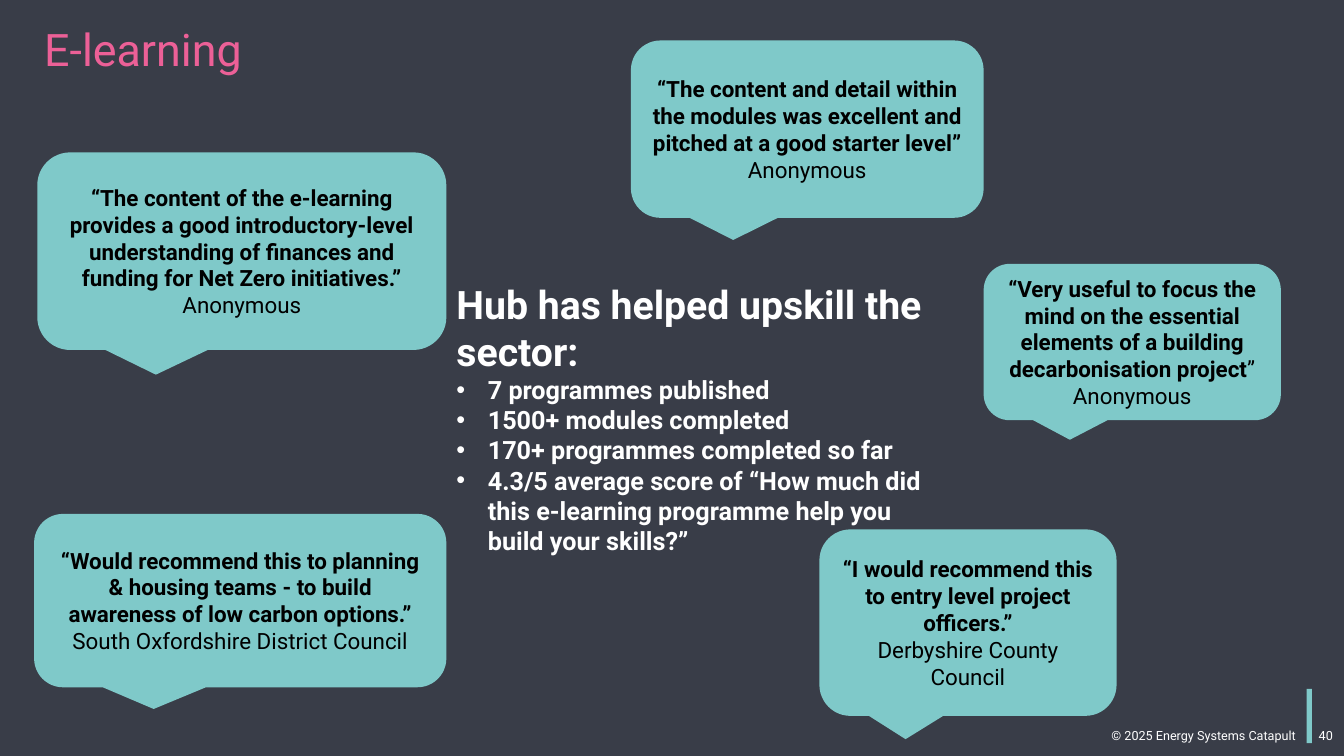
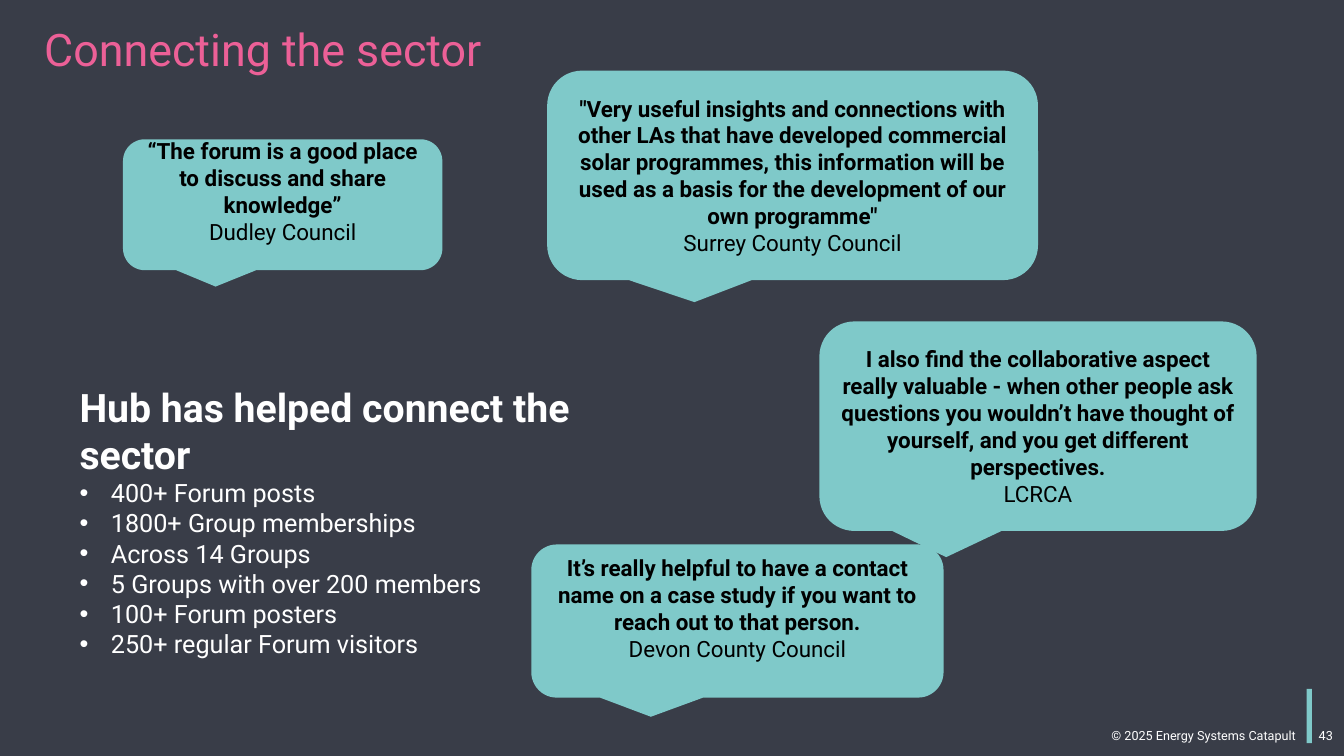
"""Build two dark slides of learner and forum feedback in speech bubbles."""
from dataclasses import dataclass

from lxml import etree
from pptx import Presentation
from pptx.dml.color import RGBColor
from pptx.enum.shapes import MSO_SHAPE
from pptx.enum.text import MSO_ANCHOR, MSO_AUTO_SIZE, PP_ALIGN
from pptx.oxml.ns import qn
from pptx.util import Cm, Pt

BUBBLE = MSO_SHAPE.ROUNDED_RECTANGULAR_CALLOUT
RECTANGLE = MSO_SHAPE.RECTANGLE
TOP, MIDDLE = MSO_ANCHOR.TOP, MSO_ANCHOR.MIDDLE
LEFT, CENTER, RIGHT = PP_ALIGN.LEFT, PP_ALIGN.CENTER, PP_ALIGN.RIGHT
NO_AUTOFIT = MSO_AUTO_SIZE.NONE


@dataclass(frozen=True)
class Theme:
    """Colours, font and type sizes that the slides share."""
    background: RGBColor = RGBColor(0x39, 0x3D, 0x48)
    teal: RGBColor = RGBColor(0x7F, 0xC9, 0xC9)
    pink: RGBColor = RGBColor(0xEC, 0x60, 0x97)
    white: RGBColor = RGBColor(0xFF, 0xFF, 0xFF)
    black: RGBColor = RGBColor(0, 0, 0)
    font: str = "Roboto"
    title_size: int = 32
    heading_size: int = 28
    list_size: int = 18
    quote_size: int = 16
    footer_size: int = 9


@dataclass(frozen=True)
class Quote:
    """A speech bubble: its box in centimetres, its words and its speaker."""
    box: tuple
    words: str
    speaker: str
    closing: str = ""
    space_below: float = 0
    tail: tuple = (-0.21, 0.625)


THEME = Theme()
COPYRIGHT = "© 2025 Energy Systems Catapult"
LIST_WIDTH, LIST_HEIGHT = 12.95, 8.81
LIST_INDENT = Cm(0.79)
INSET = 0.13

LEARNING_FACTS = [
    "7 programmes published",
    "1500+ modules completed",
    "170+ programmes completed so far",
    "4.3/5 average score of “How much did this e-learning programme help you build your skills?”",
]
LEARNING_QUOTES = [
    Quote((0.94, 3.84, 10.31, 4.98),
          "“The content of the e-learning provides a good introductory-level understanding "
          "of finances and funding for Net Zero initiatives.”", "Anonymous"),
    Quote((24.79, 6.65, 7.49, 3.94),
          "“Very useful to focus the mind on the essential elements of a building "
          "decarbonisation project", "Anonymous", closing="”"),
    Quote((15.9, 1.02, 8.89, 4.47),
          "“The content and detail within the modules was excellent and pitched at a good "
          "starter level”", "Anonymous"),
    Quote((20.65, 13.34, 7.49, 4.7),
          "“I would recommend this to entry level project officers.”",
          "Derbyshire County Council"),
    Quote((0.86, 12.95, 10.39, 4.37),
          "“Would recommend this to planning & housing teams - to build awareness of low "
          "carbon options.”", "South Oxfordshire District Council"),
]
FORUM_FACTS = [
    "400+ Forum posts",
    "1800+ Group memberships",
    "Across 14 Groups",
    "5 Groups with over 200 members",
    "100+ Forum posters",
    "250+ regular Forum visitors",
]
FORUM_QUOTES = [
    Quote((13.39, 13.72, 10.39, 3.86),
          "It’s really helpful to have a contact name on a case study if you want to reach "
          "out to that person.", "Devon County Council", space_below=0.64),
    Quote((3.1, 3.51, 8.05, 3.3),
          "“The forum is a good place to discuss and share knowledge”",
          "Dudley Council", space_below=0.68),
    Quote((20.65, 8.1, 11.02, 5.28),
          "I also find the collaborative aspect really valuable - when other people ask "
          "questions you wouldn’t have thought of yourself, and you get different "
          "perspectives.", "LCRCA"),
    Quote((13.79, 1.78, 12.37, 5.28),
          "\"Very useful insights and connections with other LAs that have developed "
          "commercial solar programmes, this information will be used as a basis for the "
          "development of our own programme\"", "Surrey County Council", tail=(-0.2, 0.605)),
]


def place(shape, box):
    """Move and size a shape by a box in centimetres."""
    shape.left, shape.top, shape.width, shape.height = map(Cm, box)


def add_run(paragraph, text, size, color, bold=False):
    """Add one formatted run to a paragraph."""
    run = paragraph.add_run()
    run.text = text
    run.font.name = THEME.font
    run.font.size = Pt(size)
    run.font.bold = bold
    run.font.color.rgb = color


def set_bullet(paragraph, character=None):
    """Give a paragraph a hanging bullet, or remove the inherited one."""
    properties = paragraph._p.get_or_add_pPr()
    indent = LIST_INDENT if character else 0
    properties.set("marL", str(indent))
    properties.set("indent", str(-indent))
    if character:
        etree.SubElement(properties, qn("a:buChar")).set("char", character)
    else:
        etree.SubElement(properties, qn("a:buNone"))


def add_solid(slide, preset, box):
    """Add a teal preset shape without line or shadow."""
    shape = slide.shapes.add_shape(preset, *map(Cm, box))
    shape.fill.solid()
    shape.fill.fore_color.rgb = THEME.teal
    shape.line.fill.background()
    shape.shadow.inherit = False
    return shape


def add_footer_text(slide, box, text, alignment, anchor, wrap):
    """Add a small white line at the foot of the slide."""
    frame = slide.shapes.add_textbox(*map(Cm, box)).text_frame
    frame.word_wrap = wrap
    frame.vertical_anchor = anchor
    paragraph = frame.paragraphs[0]
    paragraph.alignment = alignment
    add_run(paragraph, text, THEME.footer_size, THEME.white)


def add_footer(slide, number):
    """Add the copyright line, the teal bar and the slide number."""
    add_footer_text(slide, (27.76, 18.21, 5.16, 0.64), COPYRIGHT, LEFT, TOP, False)
    add_solid(slide, RECTANGLE, (32.93, 17.36, 0.13, 1.37))
    add_footer_text(slide, (31.55, 18.03, 2.29, 1.02), str(number), RIGHT, MIDDLE, True)


def prepare_placeholder(placeholder, box):
    """Place a placeholder and return its text frame, anchored at the top."""
    place(placeholder, box)
    frame = placeholder.text_frame
    frame.auto_size = NO_AUTOFIT
    frame.vertical_anchor = TOP
    return frame


def fill_title(slide, text):
    """Write the pink slide title."""
    frame = prepare_placeholder(slide.shapes.title, (0.86, 0.58, 24.84, 1.5))
    paragraph = frame.paragraphs[0]
    paragraph.alignment = LEFT
    paragraph.line_spacing = 0.9
    add_run(paragraph, text, THEME.title_size, THEME.pink)


def fill_facts(slide, corner, heading, facts, bold):
    """Write a bold heading and its bulleted facts in the body placeholder."""
    frame = prepare_placeholder(slide.placeholders[1], (*corner, LIST_WIDTH, LIST_HEIGHT))
    paragraph = frame.paragraphs[0]
    set_bullet(paragraph)
    paragraph.space_before = Pt(0)
    add_run(paragraph, heading, THEME.heading_size, THEME.white, True)
    for fact in facts:
        paragraph = frame.add_paragraph()
        set_bullet(paragraph, "•")
        paragraph.space_before = Pt(0)
        add_run(paragraph, fact, THEME.list_size, THEME.white, bold)


def add_quote(slide, quote):
    """Add a speech bubble with a bold quote above its speaker."""
    bubble = add_solid(slide, BUBBLE, quote.box)
    bubble.adjustments[0], bubble.adjustments[1] = quote.tail
    frame = bubble.text_frame
    frame.word_wrap = True
    frame.vertical_anchor = MIDDLE
    frame.margin_bottom = Cm(INSET + quote.space_below)
    words, speaker = frame.paragraphs[0], frame.add_paragraph()
    words.alignment = speaker.alignment = CENTER
    add_run(words, quote.words, THEME.quote_size, THEME.black, True)
    if quote.closing:
        add_run(words, quote.closing, THEME.quote_size, THEME.black)
    add_run(speaker, quote.speaker, THEME.quote_size, THEME.black)


def add_feedback_slide(presentation, number, title, corner, heading, facts, quotes, bold):
    """Add a slide with a title, a list of facts and speech bubbles."""
    slide = presentation.slides.add_slide(presentation.slide_layouts[1])
    add_footer(slide, number)
    fill_title(slide, title)
    fill_facts(slide, corner, heading, facts, bold)
    for quote in quotes:
        add_quote(slide, quote)


def main():
    """Build and save the presentation."""
    presentation = Presentation()
    presentation.slide_width, presentation.slide_height = Cm(33.87), Cm(19.05)
    background = presentation.slide_master.background.fill
    background.solid()
    background.fore_color.rgb = THEME.background
    add_feedback_slide(presentation, 40, "E-learning", (11.25, 6.93),
                       "Hub has helped upskill the sector:",
                       LEARNING_FACTS, LEARNING_QUOTES, bold=True)
    add_feedback_slide(presentation, 43, "Connecting the sector", (1.75, 9.53),
                       "Hub has helped connect the sector",
                       FORUM_FACTS, FORUM_QUOTES, bold=False)
    presentation.save("out.pptx")


if __name__ == "__main__":
    main()
